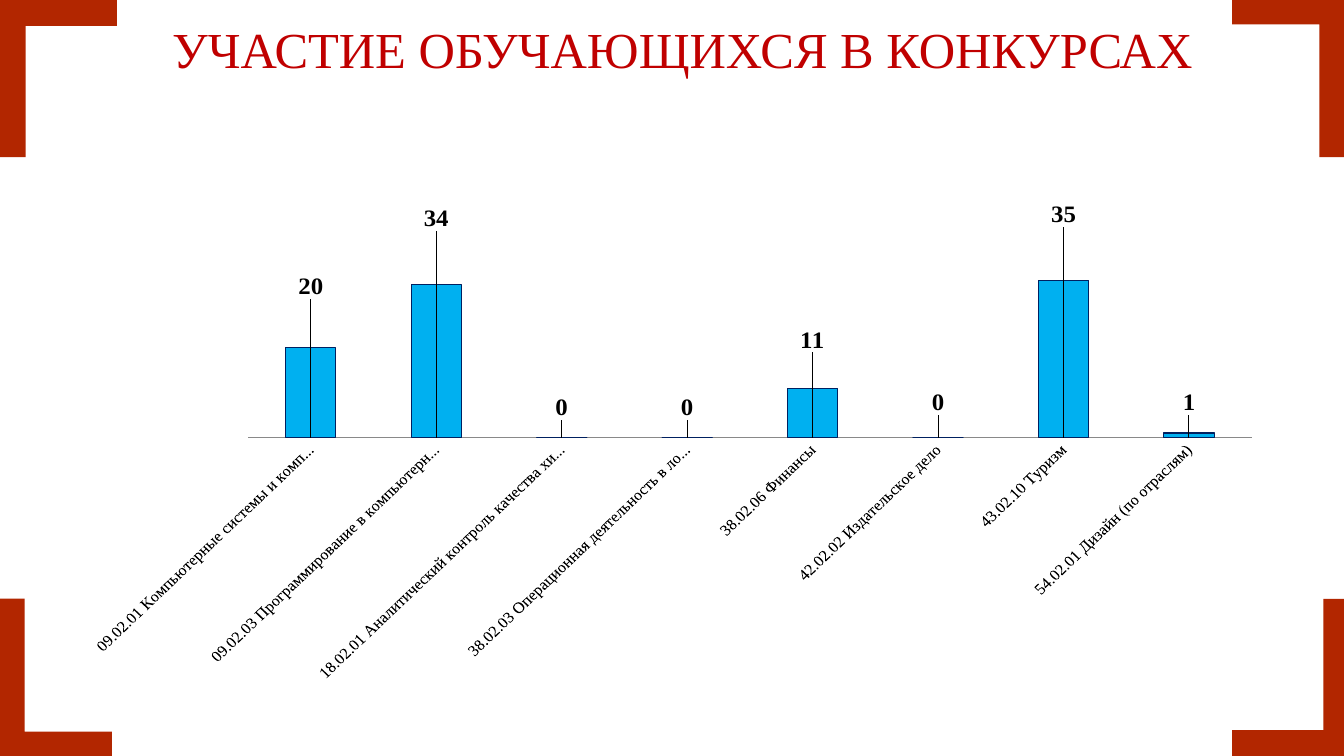
from dataclasses import dataclass

from lxml import etree
from pptx import Presentation
from pptx.chart.data import CategoryChartData
from pptx.dml.color import RGBColor
from pptx.enum.chart import XL_CHART_TYPE as ChartType
from pptx.enum.chart import XL_LABEL_POSITION as LabelPosition
from pptx.enum.chart import XL_TICK_MARK as TickMark
from pptx.enum.shapes import MSO_SHAPE as Shape
from pptx.enum.text import MSO_ANCHOR as Anchor
from pptx.enum.text import PP_ALIGN as Align
from pptx.oxml import parse_xml
from pptx.oxml.ns import nsdecls, qn
from pptx.util import Inches, Pt


@dataclass(frozen=True)
class Theme:
    corner: RGBColor = RGBColor(0xB2, 0x26, 0x00)
    title: RGBColor = RGBColor(0xC0, 0x00, 0x00)
    bar: RGBColor = RGBColor(0x00, 0xB0, 0xF0)
    bar_edge: RGBColor = RGBColor(0x00, 0x20, 0x60)
    axis: RGBColor = RGBColor(0x89, 0x89, 0x89)
    ink: RGBColor = RGBColor(0x00, 0x00, 0x00)
    serif: str = "Times New Roman"
    sans: str = "Calibri"
    title_size: int = 36
    label_size: int = 18
    axis_size: int = 12


CORNERS = [
    (0, 5.94, 1.11, 1.56, 0),
    (12.22, 0, 1.11, 1.56, 180),
    (12.02, 6.14, 1.56, 1.16, 270),
    (-0.2, 0.2, 1.56, 1.16, 90),
]

SPECIALTIES = [
    ("09.02.01 Компьютерные системы и комплексы", 20, -0.3),
    ("09.02.03 Программирование в компьютерных системах", 34, -0.45),
    ("18.02.01 Аналитический контроль качества химических соединений", 0, -0.03),
    ("38.02.03 Операционная деятельность в логистике", 0, -0.03),
    ("38.02.06 Финансы", 11, -0.18),
    ("42.02.02 Издательское дело", 0, -0.04),
    ("43.02.10 Туризм", 35, -0.46),
    ("54.02.01 Дизайн (по отраслям)", 1, -0.04),
]


def manual_layout(**settings):
    layout = parse_xml(f"<c:layout {nsdecls('c')}><c:manualLayout/></c:layout>")
    for name, value in settings.items():
        etree.SubElement(layout[0], qn(f"c:{name}")).set("val", str(value))
    return layout


class SlideBuilder:
    def __init__(self, slide, theme):
        self.slide = slide
        self.theme = theme

    def corner(self, left, top, width, height, rotation):
        corner = self.slide.shapes.add_shape(
            Shape.CORNER, Inches(left), Inches(top), Inches(width), Inches(height))
        corner.rotation = rotation
        corner.adjustments[0] = 0.218
        corner.adjustments[1] = 0.221
        corner.shadow.inherit = False
        corner.fill.solid()
        corner.fill.fore_color.rgb = self.theme.corner
        corner.line.fill.background()

    def title(self, text, left, top, width, height):
        title = self.slide.shapes.title
        title.left, title.top = Inches(left), Inches(top)
        title.width, title.height = Inches(width), Inches(height)
        frame = title.text_frame
        frame.text = text
        frame.word_wrap = True
        frame.vertical_anchor = Anchor.TOP
        para = frame.paragraphs[0]
        para.alignment = Align.CENTER
        para.line_spacing = 0.9
        self.style_font(para.font, self.theme.serif, self.theme.title_size, self.theme.title)

    def style_font(self, font, name, size, color, bold=False):
        font.name, font.size, font.bold = name, Pt(size), bold
        font.color.rgb = color

    def column_chart(self, rows, left, top, width, height):
        theme = self.theme
        data = CategoryChartData()
        data.categories = [name for name, _, _ in rows]
        data.add_series("Series 1", [value for _, value, _ in rows])
        chart = self.slide.shapes.add_chart(
            ChartType.COLUMN_STACKED, Inches(left), Inches(top),
            Inches(width), Inches(height), data).chart
        chart.has_legend = False
        chart.has_title = False
        self.style_font(chart.font, theme.sans, theme.label_size, theme.ink)
        self.axes(chart)

        plot = chart.plots[0]
        plot.gap_width, plot.overlap = 150, 100
        plot.vary_by_categories = False
        series = plot.series[0]
        series.format.fill.solid()
        series.format.fill.fore_color.rgb = theme.bar
        series.format.line.color.rgb = theme.bar_edge
        series.format.line.width = Pt(0.75)
        self.labels(series, [shift for _, _, shift in rows])

        area = plot._element.getparent()
        for old in area.findall(qn("c:layout")):
            area.remove(old)
        area.insert(0, manual_layout(
            layoutTarget="inner", xMode="edge", yMode="edge", x=0.12, y=0.11, w=0.88, h=0.4))

    def axes(self, chart):
        theme = self.theme
        categories, values = chart.category_axis, chart.value_axis
        values.visible = False
        values.has_major_gridlines = False
        values.minimum_scale, values.maximum_scale = 0, 40
        categories.major_tick_mark = TickMark.NONE
        categories.format.line.color.rgb = theme.axis
        categories.format.line.width = Pt(0.75)
        self.style_font(categories.tick_labels.font, theme.serif, theme.axis_size, theme.ink)
        categories._element.find(qn("c:txPr")).find(qn("a:bodyPr")).set("rot", "-2700000")

    def labels(self, series, shifts):
        theme = self.theme
        labels = series.data_labels
        labels.show_value = True
        labels.position = LabelPosition.INSIDE_BASE
        self.style_font(labels.font, theme.serif, theme.label_size, theme.ink, bold=True)
        for index in range(len(shifts)):
            label = series.points[index].data_label
            label.position = LabelPosition.INSIDE_BASE
            self.style_font(label.font, theme.serif, theme.label_size, theme.ink, bold=True)
        for entry, shift in zip(labels._element.findall(qn("c:dLbl")), shifts):
            entry.find(qn("c:idx")).addnext(manual_layout(x=0, y=shift))


def main():
    deck = Presentation()
    deck.slide_width, deck.slide_height = Inches(13.33), Inches(7.5)
    page = SlideBuilder(deck.slides.add_slide(deck.slide_layouts[5]), Theme())
    for corner in CORNERS:
        page.corner(*corner)
    page.title("УЧАСТИЕ ОБУЧАЮЩИХСЯ В КОНКУРСАХ", 1.02, 0.2, 11.5, 1.45)
    page.column_chart(SPECIALTIES, 0.92, 2, 11.5, 4.76)
    deck.save("out.pptx")


if __name__ == "__main__":
    main()
